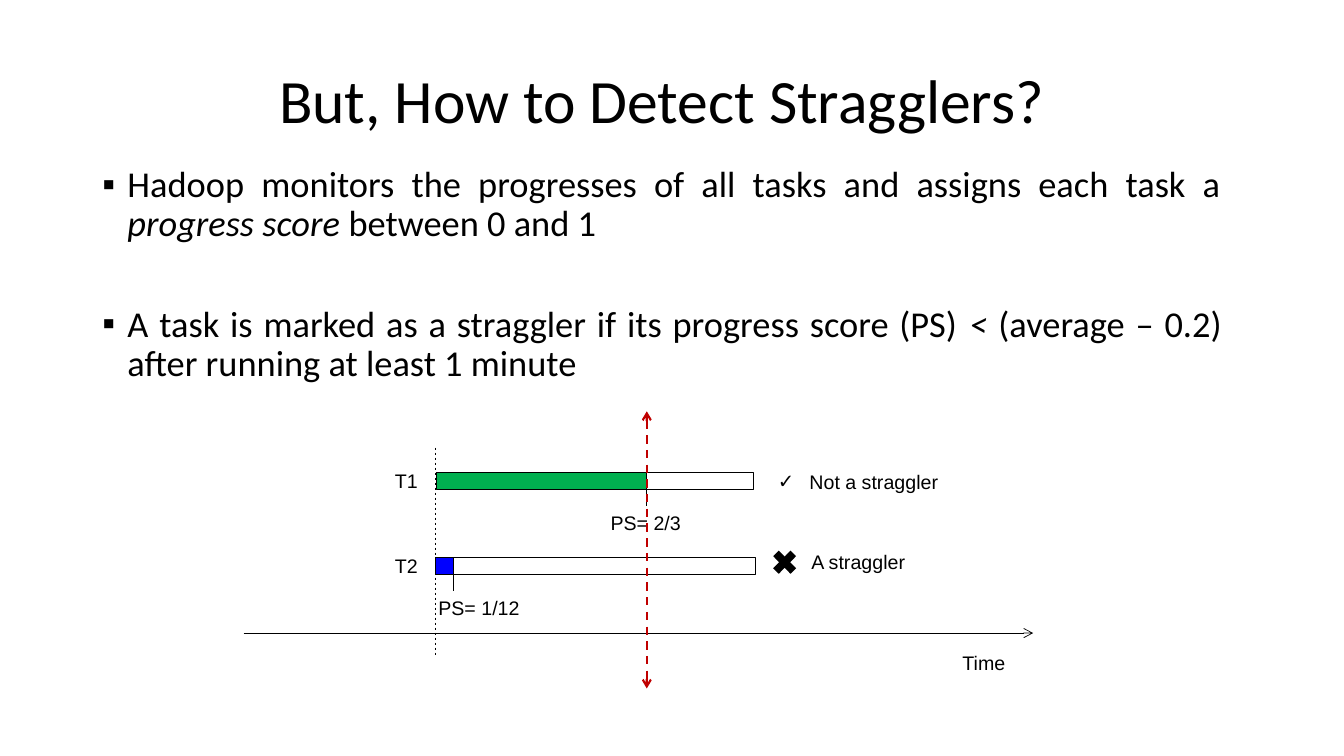
from pptx import Presentation
from pptx.dml.color import RGBColor
from pptx.enum.dml import MSO_LINE
from pptx.enum.shapes import MSO_CONNECTOR, MSO_SHAPE
from pptx.enum.text import MSO_ANCHOR, MSO_AUTO_SIZE, PP_ALIGN
from pptx.oxml.ns import qn
from pptx.util import Pt
from lxml.etree import SubElement

TITLE = "But, How to Detect Stragglers?"
POINTS = [
    [("Hadoop monitors the progresses of all tasks and assigns each task a ", False),
     ("progress score ", True), ("between 0 and 1", False)],
    [("A task is marked as a straggler if its progress score (PS) ", False),
     ("<", True), (" (average – 0.2) after running at least 1 minute", False)],
]
TASKS = [
    {"name": "T1", "score": "PS= 2/3", "colour": "done", "edges": (311.8, 462, 538.5),
     "score_box": (429, 65), "verdict": "Not a straggler", "verdict_box": (548.6, 331.9, 129.6),
     "bullet": "✓"},
    {"name": "T2", "score": "PS= 1/12", "colour": "late", "edges": (311, 324, 540),
     "score_box": (306, 72.7), "verdict": "A straggler", "verdict_box": (572.4, 389.5, 82),
     "bullet": None},
]
AXIS = "Time"

THEME = {
    "ink": RGBColor(0, 0, 0), "blank": RGBColor(255, 255, 255),
    "done": RGBColor(0, 0xB0, 0x50), "late": RGBColor(0, 0, 255),
    "average": RGBColor(0xC0, 0, 0),
    "heading_font": "Calibri", "label_font": "Arial",
    "title": 44, "point": 26, "label": 14,
}
MARGIN, CONTENT_WIDTH = 66, 814
FIRST_ROW, ROW_PITCH, BAR_HEIGHT, TICK_HEIGHT, LABEL_HEIGHT = 337.7, 60.2, 12.2, 24, 24.2
START_X, AVERAGE_X, AXIS_Y = 311, 462, 452.2


def apply(target, **values):
    for key, value in values.items():
        setattr(target, key, value)


def style(font, size, face):
    apply(font, size=Pt(THEME[size]), name=THEME[face])
    font.color.rgb = THEME["ink"]


def add_bullet(paragraph, symbol, indent):
    properties = paragraph._p.get_or_add_pPr()
    properties.set("marL", str(Pt(indent)))
    properties.set("indent", str(-Pt(indent)))
    SubElement(properties, qn("a:buFont")).set("typeface", THEME["label_font"])
    SubElement(properties, qn("a:buChar")).set("char", symbol)


def add_label(slide, text, left, top, width, bullet=None):
    label = slide.shapes.add_textbox(Pt(left), Pt(top), Pt(width), Pt(LABEL_HEIGHT))
    apply(label.text_frame, word_wrap=False, auto_size=MSO_AUTO_SIZE.SHAPE_TO_FIT_TEXT)
    paragraph = label.text_frame.paragraphs[0]
    if bullet:
        add_bullet(paragraph, bullet, 22.5)
    run = paragraph.add_run()
    run.text = text
    style(run.font, "label", "label_font")


def add_block(slide, kind, left, top, width, height, colour, outlined=True):
    block = slide.shapes.add_shape(kind, Pt(left), Pt(top), Pt(width), Pt(height))
    block.shadow.inherit = False
    block.fill.solid()
    block.fill.fore_color.rgb = THEME[colour]
    if outlined:
        block.line.color.rgb = THEME["ink"]
        block.line.width = Pt(0.75)
    else:
        block.line.fill.background()


def add_rule(slide, start, end, colour="ink", width=0.5, dashed=False, arrows=()):
    rule = slide.shapes.add_connector(MSO_CONNECTOR.STRAIGHT, *map(Pt, start + end))
    rule.line.color.rgb = THEME[colour]
    rule.line.width = Pt(width)
    if dashed:
        rule.line.dash_style = MSO_LINE.DASH
    properties = rule._element.spPr
    for arrow in arrows:
        SubElement(properties.find(qn("a:ln")), qn(f"a:{arrow}")).set("type", "arrow")
    SubElement(properties, qn("a:effectLst"))


def add_title(slide):
    title = slide.shapes.title
    apply(title, left=Pt(MARGIN), top=Pt(21.6), width=Pt(CONTENT_WIDTH), height=Pt(104.4))
    title.text_frame.text = TITLE
    title.text_frame.vertical_anchor = MSO_ANCHOR.MIDDLE
    paragraph = title.text_frame.paragraphs[0]
    apply(paragraph, alignment=PP_ALIGN.CENTER, line_spacing=0.9)
    style(paragraph.runs[0].font, "title", "heading_font")


def add_points(slide):
    body = slide.shapes.add_textbox(Pt(MARGIN), Pt(115.2), Pt(CONTENT_WIDTH), Pt(170)).text_frame
    body.word_wrap = True
    for index, point in enumerate(POINTS):
        paragraph = body.add_paragraph() if index else body.paragraphs[0]
        add_bullet(paragraph, "▪", 18)
        apply(paragraph, alignment=PP_ALIGN.JUSTIFY, line_spacing=0.9,
              space_before=Pt(43.5 if index else 0))
        for text, italic in point:
            run = paragraph.add_run()
            run.text = text
            style(run.font, "point", "heading_font")
            run.font.italic = italic


def add_task(slide, task, top):
    start, reached, end = task["edges"]
    bar = MSO_SHAPE.RECTANGLE
    add_block(slide, bar, start, top, reached - start, BAR_HEIGHT, task["colour"])
    add_rule(slide, (reached, top), (reached, top + TICK_HEIGHT))
    add_block(slide, bar, reached, top, end - reached, BAR_HEIGHT, "blank")
    score_left, score_width = task["score_box"]
    add_label(slide, task["score"], score_left, top + TICK_HEIGHT, score_width)
    add_label(slide, task["name"], 275, top - 6, 31)
    add_label(slide, task["verdict"], *task["verdict_box"], bullet=task["bullet"])


def main():
    deck = Presentation()
    apply(deck, slide_width=Pt(960), slide_height=Pt(540))
    slide = deck.slides.add_slide(deck.slide_layouts[5])
    add_title(slide)
    add_points(slide)
    for row, task in enumerate(TASKS):
        add_task(slide, task, FIRST_ROW + row * ROW_PITCH)
    add_block(slide, MSO_SHAPE.MATH_MULTIPLY, 548.6, 389.5, 23.8, LABEL_HEIGHT, "ink", False)
    add_rule(slide, (174, AXIS_Y), (738, AXIS_Y), arrows=["tailEnd"])
    add_label(slide, AXIS, 680.4, 461.5, 45.4)
    add_rule(slide, (START_X, 319.7), (START_X, 468), dashed=True)
    add_rule(slide, (AVERAGE_X, 293.8), (AVERAGE_X, 491.8), "average", 1.5, True,
             ["headEnd", "tailEnd"])
    deck.save("out.pptx")


if __name__ == "__main__":
    main()
